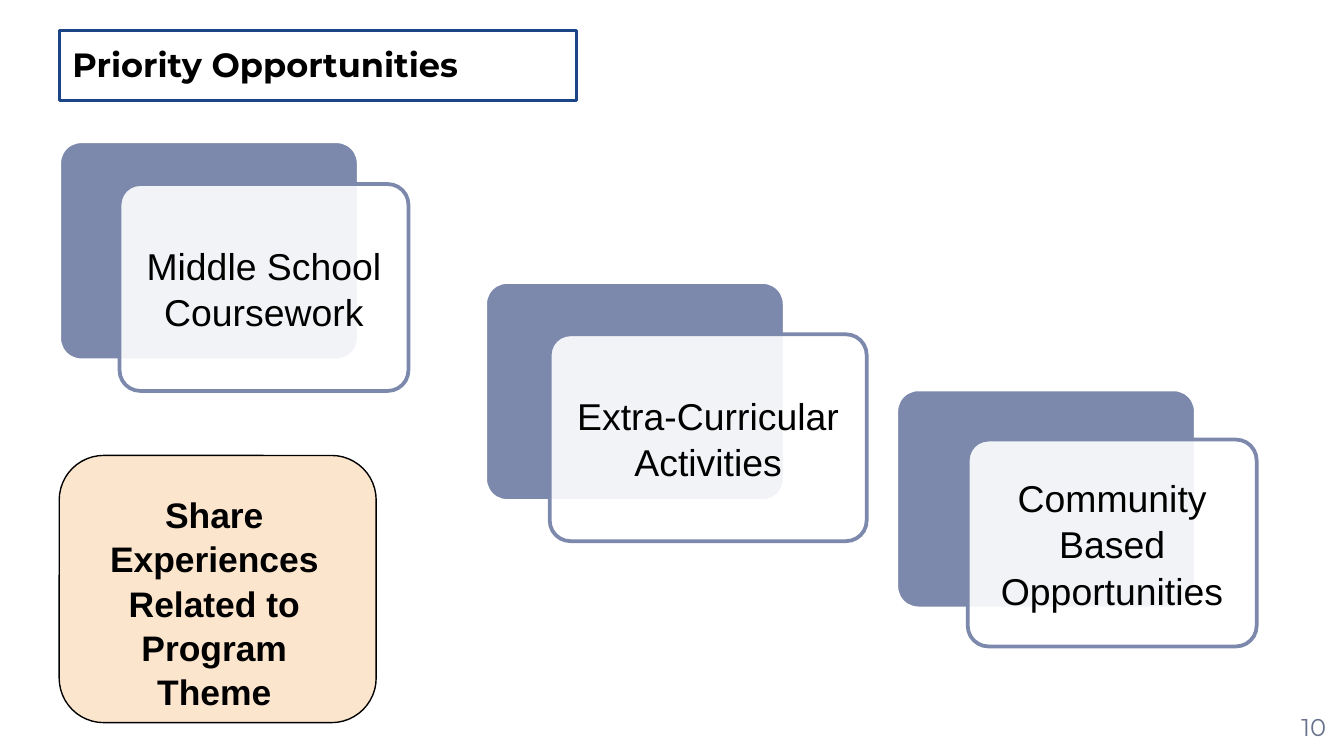
from lxml.etree import SubElement
from pptx import Presentation
from pptx.dml.color import RGBColor
from pptx.enum.shapes import MSO_SHAPE
from pptx.enum.text import MSO_ANCHOR, MSO_AUTO_SIZE, PP_ALIGN
from pptx.oxml import parse_xml
from pptx.oxml.ns import nsdecls, qn
from pptx.util import Cm, Pt


def paint(shape, fill, line, width):
    if fill:
        shape.fill.solid()
        shape.fill.fore_color.rgb = RGBColor.from_string(fill)
    shape.line.color.rgb = RGBColor.from_string(line)
    shape.line.width = Pt(width)


def write(shape, lines, color="000000", inset=0.25, anchor=MSO_ANCHOR.TOP,
          align=PP_ALIGN.CENTER, spacing=1.0, **font):
    frame = shape.text_frame
    frame.text = "\n".join(lines)
    frame_format = {"word_wrap": True, "auto_size": MSO_AUTO_SIZE.NONE, "vertical_anchor": anchor}
    for side in ("left", "top", "right", "bottom"):
        frame_format[f"margin_{side}"] = Cm(inset)
    for key, value in frame_format.items():
        setattr(frame, key, value)
    for paragraph in frame.paragraphs:
        paragraph.alignment = align
        paragraph.line_spacing = spacing
        for run in paragraph.runs:
            for key, value in font.items():
                setattr(run.font, key, value)
            run.font.color.rgb = RGBColor.from_string(color)


prs = Presentation()
prs.slide_width, prs.slide_height = Cm(25.4), Cm(14.29)
prs.element.set("firstSlideNum", "10")
slide = prs.slides.add_slide(prs.slide_layouts[5])
shapes = slide.shapes

# Title
title = shapes.title
title.left, title.top, title.width, title.height = Cm(1.12), Cm(0.58), Cm(9.78), Cm(1.32)
paint(title, None, "1C4587", 1.5)
write(title, ["Priority Opportunities"], align=PP_ALIGN.LEFT,
      name="Montserrat", size=Pt(18), bold=True)

# Opportunity cards: solid panel behind, translucent label in front
opportunities = [
    ("Middle School Coursework", (1.88, 1.91), (2.26, 3.48), 5.46),
    ("Extra-Curricular Activities", (9.93, 4.57), (10.39, 6.32), 5.99),
    ("Community Based Opportunities", (17.7, 6.6), (18.29, 8.31), 5.46),
]
for name, (panel_x, panel_y), (label_x, label_y), label_width in opportunities:
    panel = shapes.add_shape(MSO_SHAPE.ROUNDED_RECTANGLE, Cm(panel_x), Cm(panel_y),
                             Cm(4.14), Cm(5.66))
    panel.rotation = 270
    paint(panel, "7D89AC", "FFFFFF", 2)
    label = shapes.add_shape(MSO_SHAPE.ROUNDED_RECTANGLE, Cm(label_x), Cm(label_y),
                             Cm(label_width), Cm(3.91))
    paint(label, "FFFFFF", "7D89AC", 2)
    fill_color = label.element.spPr.find(qn("a:solidFill"))[0]
    SubElement(fill_color, qn("a:alpha"), val="90000")
    for card in (panel, label):
        card.adjustments[0] = 0.1
        card.shadow.inherit = False
    write(label, [name], inset=0.18, anchor=MSO_ANCHOR.MIDDLE, spacing=1.04,
          name="Arial", size=Pt(20))

# Program theme
theme = shapes.add_shape(MSO_SHAPE.ROUNDED_RECTANGLE, Cm(1.12), Cm(8.61), Cm(5.99), Cm(5.05))
theme.shadow.inherit = False
paint(theme, "FCE5CD", "000000", 0.75)
theme_text = shapes.add_textbox(Cm(1.32), Cm(9.04), Cm(5.46), Cm(4.14))
write(theme_text, ["Share", "Experiences", "Related to Program Theme"], spacing=1.04,
      name="Arial", size=Pt(19), bold=True)

# Slide number, as a live field that takes over the formatted run
page = shapes.add_textbox(Cm(24.26), Cm(13.16), Cm(1.14), Cm(1.14))
write(page, ["10"], color="68728D", inset=0, anchor=MSO_ANCHOR.MIDDLE,
      name="Montserrat", size=Pt(13))
number = page.element.find(".//" + qn("a:r"))
field = parse_xml(f'<a:fld {nsdecls("a")} id="{{B6F15528-21DE-4FAA-801E-634DDDAF4B2B}}" type="slidenum"/>')
number.addprevious(field)
field.extend(list(number))
number.getparent().remove(number)

prs.save("out.pptx")
